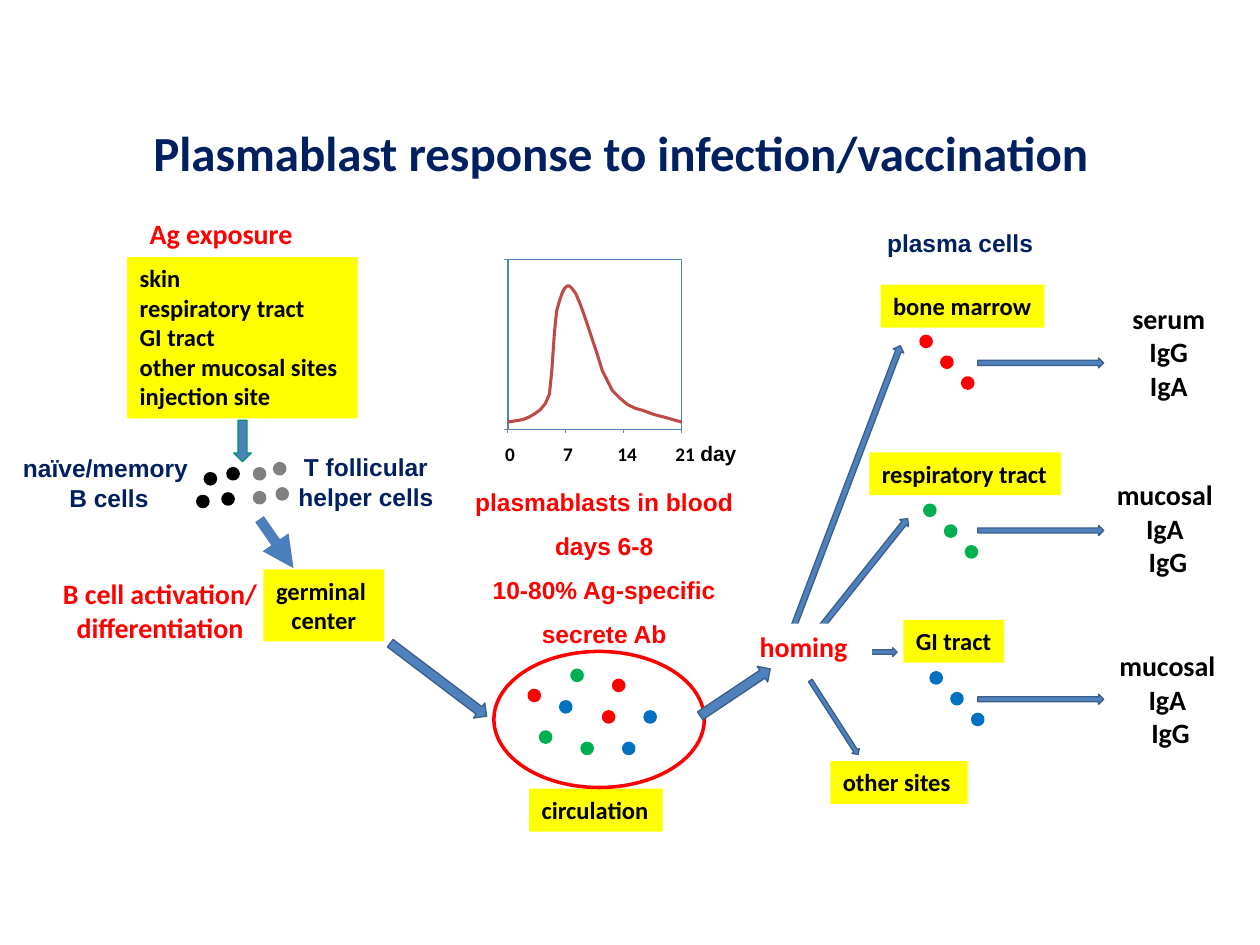
from lxml import etree
from pptx import Presentation
from pptx.dml.color import RGBColor
from pptx.enum.shapes import MSO_CONNECTOR, MSO_SHAPE
from pptx.enum.text import MSO_AUTO_SIZE, PP_ALIGN
from pptx.oxml.ns import qn
from pptx.util import Inches, Pt

OVAL, RECTANGLE, ARROW = MSO_SHAPE.OVAL, MSO_SHAPE.RECTANGLE, MSO_SHAPE.RIGHT_ARROW
STRAIGHT = MSO_CONNECTOR.STRAIGHT
LEFT, CENTER = PP_ALIGN.LEFT, PP_ALIGN.CENTER
FIT_TEXT = MSO_AUTO_SIZE.SHAPE_TO_FIT_TEXT
color = RGBColor.from_string

BLACK, GRAY, WHITE, NAVY = "000000", "808080", "FFFFFF", "002060"
RED, GREEN, BLUE, YELLOW = "FF0000", "00B050", "0070C0", "FFFF00"
ARROW_FILL, ARROW_LINE = "4F81BD", "3A5F8C"
DOT = 0.08

presentation = Presentation()
presentation.slide_width, presentation.slide_height = Inches(10), Inches(7.5)
slide = presentation.slides.add_slide(presentation.slide_layouts[6])


def add_text(text, box, size, font="Calibri", ink=BLACK, fill=None, align=LEFT,
             wrap=False, margin=None, spacing=None):
    """Add bold text, one paragraph per line, in a box given in inches."""
    shape = slide.shapes.add_textbox(*map(Inches, box))
    if fill:
        shape.fill.solid()
        shape.fill.fore_color.rgb = color(fill)
    frame = shape.text_frame
    frame.word_wrap = wrap
    frame.auto_size = FIT_TEXT
    if margin is not None:
        frame.margin_left = frame.margin_right = Inches(margin)
        frame.margin_top = frame.margin_bottom = Inches(margin)
    frame.text = text
    for paragraph in frame.paragraphs:
        paragraph.alignment = align
        paragraph.line_spacing = spacing
        paragraph.font.name = font
        paragraph.font.size = Pt(size)
        paragraph.font.bold = True
        paragraph.font.color.rgb = color(ink)


def add_preset(kind, box, fill, line, width, rotation=0):
    """Add a preset shape; a fill of None leaves it hollow."""
    shape = slide.shapes.add_shape(kind, *map(Inches, box))
    shape.shadow.inherit = False
    shape.rotation = rotation
    if fill:
        shape.fill.solid()
        shape.fill.fore_color.rgb = color(fill)
    else:
        shape.fill.background()
    shape.line.color.rgb = color(line)
    shape.line.width = Pt(width)


add_text("Plasmablast response to infection/vaccination",
         (1.12, 0.92, 7.8, 0.57), 28, ink=NAVY)

# Arrows from homing to the sites, and from the sites to the antibodies
site_arrows = [
    ((6.42, 5.14, 0.7, 0.07), 0),
    ((6.23, 4.54, 1.2, 0.09), 308.6),
    ((5.52, 3.82, 2.4, 0.09), 290.8),
    ((6.27, 5.66, 0.7, 0.07), 57.2),
    ((3, 5.32, 0.96, 0.15), 37.1),
] + [((7.76, top, 1, 0.08), 0) for top in (2.84, 4.17, 5.51)]
for box, rotation in site_arrows:
    add_preset(ARROW, box, ARROW_FILL, ARROW_LINE, 0.75, rotation)
add_preset(ARROW, (1.76, 3.43, 0.33, 0.14), ARROW_FILL, "00956F", 0.75, 90)

activation = slide.shapes.add_connector(
    STRAIGHT, Inches(2.06), Inches(4.12), Inches(2.33), Inches(4.51))
activation.line.color.rgb = color("4B7EBC")
activation.line.width = Pt(6)
etree.SubElement(activation.line._get_or_add_ln(), qn("a:tailEnd"), type="triangle")
etree.SubElement(activation._element.spPr, qn("a:effectLst"))

# Yellow location labels
for text, box, align, wrap in [
    ("skin\nrespiratory tract\nGI tract\nother mucosal sites\ninjection site",
     (1.01, 2.04, 1.83, 1.28), LEFT, True),
    ("germinal \ncenter", (2.09, 4.52, 0.96, 0.57), CENTER, False),
    ("circulation", (4.2, 6.26, 1.06, 0.34), LEFT, False),
    ("bone marrow", (6.99, 2.26, 1.3, 0.34), LEFT, False),
    ("respiratory tract", (6.9, 3.59, 1.52, 0.34), LEFT, False),
    ("GI tract", (7.17, 4.92, 0.8, 0.34), LEFT, False),
    ("other sites", (6.59, 6.04, 1.09, 0.34), LEFT, False),
]:
    add_text(text, box, 14, fill=YELLOW, align=align, wrap=wrap)

# Red process labels
add_text("Ag exposure", (1.09, 1.67, 1.67, 0.37), 16, ink=RED, wrap=True)
add_text("B cell activation/ differentiation", (0.31, 4.53, 1.92, 0.64), 16,
         ink=RED, align=CENTER, wrap=True)
add_text("homing", (5.93, 4.95, 0.99, 0.37), 16, ink=RED, fill=WHITE, wrap=True)
add_text("plasmablasts in blood\ndays 6-8\n10-80% Ag-specific\nsecrete Ab",
         (3.67, 3.7, 2.25, 2.22), 14, "Arial", RED, align=CENTER, spacing=1.5)

# Navy cell labels
for text, box, wrap in [
    ("plasma cells", (6.93, 1.76, 1.38, 0.34), False),
    ("naïve/memory \nB cells", (0.08, 3.55, 1.57, 0.57), False),
    ("T follicular helper cells", (2.14, 3.54, 1.53, 0.57), True),
]:
    add_text(text, box, 14, "Arial", NAVY, align=CENTER, wrap=wrap)

# Antibodies made at each site
for text, box in [
    ("serum\nIgG\nIgA", (8.88, 2.34, 0.79, 0.91)),
    ("mucosal\nIgA\n IgG", (8.76, 3.74, 0.97, 0.91)),
    ("mucosal\nIgA\n IgG", (8.78, 5.1, 0.97, 0.91)),
]:
    add_text(text, box, 16, align=CENTER)

# Cells
add_preset(OVAL, (3.92, 5.17, 1.67, 1.08), None, RED, 2)
cells = {
    BLACK: [(1.63, 3.76), (1.57, 3.94), (1.81, 3.72), (1.77, 3.92)],
    GRAY: [(2.02, 3.91), (2.02, 3.72), (2.2, 3.88), (2.18, 3.68)],
    RED: [(4.2, 5.48), (4.79, 5.65), (4.87, 5.4)],
    GREEN: [(4.29, 5.81), (4.62, 5.9), (4.54, 5.32)],
    BLUE: [(4.45, 5.57), (4.95, 5.9), (5.12, 5.65)],
}
for ink, left, top in [(RED, 7.31, 2.67), (GREEN, 7.34, 4.01), (BLUE, 7.39, 5.34)]:
    cells[ink] += [(left + 0.165 * step, top + 0.165 * step) for step in range(3)]
for ink, corners in cells.items():
    for left, top in corners:
        add_preset(OVAL, (left, top, DOT, DOT), ink, ink, 2)

# Plasmablast time course
plot_left, plot_top, plot_width, plot_height = 4.03, 2.06, 1.38, 1.35
plot_bottom = plot_top + plot_height
ticks = [(plot_left + plot_width * step / 3, plot_bottom, 0, 0.03) for step in range(4)]
ticks += [(plot_left - 0.03, y, 0.03, 0) for y in (plot_top, plot_bottom)]
for x, y, width, height in ticks:
    tick = slide.shapes.add_connector(
        STRAIGHT, Inches(x), Inches(y), Inches(x + width), Inches(y + height))
    tick.line.color.rgb = color("868686")
    tick.line.width = Pt(0.75)
    etree.SubElement(tick._element.spPr, qn("a:effectLst"))
add_preset(RECTANGLE, (plot_left, plot_top, plot_width, plot_height),
           WHITE, ARROW_FILL, 1)

curve_points = [(Inches(x), Inches(y)) for x, y in [
    (4.03, 3.35), (4.09, 3.34), (4.15, 3.33), (4.2, 3.31), (4.25, 3.28), (4.29, 3.25),
    (4.33, 3.2), (4.36, 3.13), (4.37, 3.04), (4.38, 2.94), (4.39, 2.79), (4.4, 2.65),
    (4.41, 2.54), (4.42, 2.46), (4.44, 2.39), (4.46, 2.33), (4.48, 2.29), (4.5, 2.27),
    (4.52, 2.27), (4.54, 2.29), (4.57, 2.33), (4.6, 2.4), (4.64, 2.51), (4.69, 2.66),
    (4.74, 2.81), (4.78, 2.94), (4.82, 3.02), (4.86, 3.1), (4.92, 3.16), (4.98, 3.21),
    (5.04, 3.24), (5.11, 3.26), (5.19, 3.29), (5.27, 3.31), (5.34, 3.33), (5.41, 3.35)]]
builder = slide.shapes.build_freeform(*curve_points[0])
builder.add_line_segments(curve_points[1:], close=False)
curve = builder.convert_to_shape()
curve.shadow.inherit = False
curve.fill.background()
curve.line.color.rgb = color("BE4B48")
curve.line.width = Pt(1.75)

for day, left, width in [("0", 4.01, 0.09), ("7", 4.47, 0.09),
                         ("14", 4.9, 0.17), ("21", 5.36, 0.17)]:
    add_text(day, (left, 3.51, width, 0.19), 11, margin=0)
add_text("day", (5.46, 3.45, 0.54, 0.3), 12, "Arial")

# Arrow from circulation to homing, above the homing label
add_preset(ARROW, (5.5, 5.42, 0.67, 0.15), ARROW_FILL, ARROW_LINE, 0.75, 326.2)

presentation.save("out.pptx")
